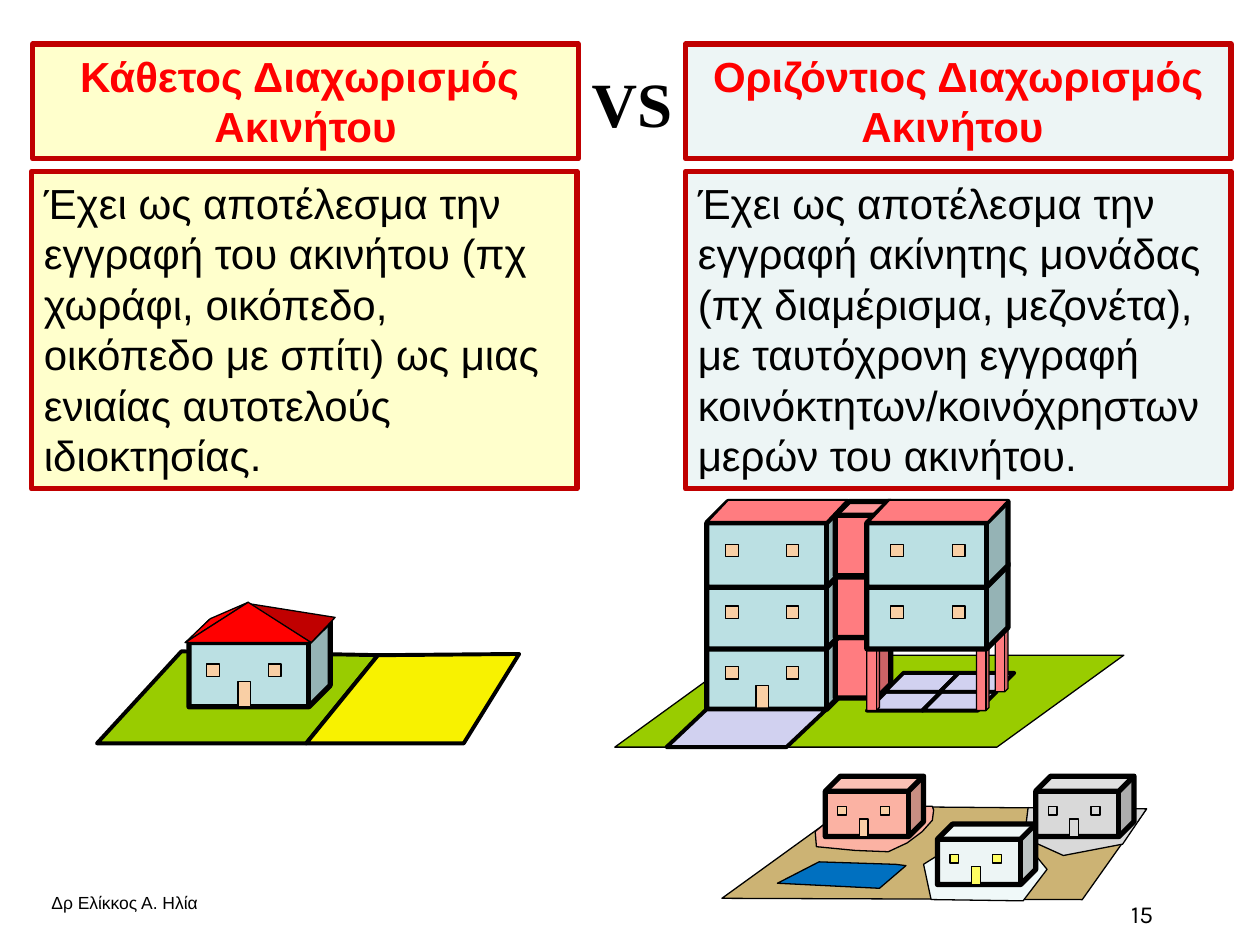
from pptx import Presentation
from pptx.dml.color import RGBColor
from pptx.enum.shapes import MSO_SHAPE
from pptx.enum.text import MSO_ANCHOR, PP_ALIGN
from pptx.util import Emu, Pt

PX = 9144  # EMU per px, 100 px to the inch
RECT, CUBE = MSO_SHAPE.RECTANGLE, MSO_SHAPE.CUBE
SLANT, TRIANGLE = MSO_SHAPE.PARALLELOGRAM, MSO_SHAPE.ISOSCELES_TRIANGLE
TOP, BOTTOM = MSO_ANCHOR.TOP, MSO_ANCHOR.BOTTOM
LEFT, CENTER, RIGHT = PP_ALIGN.LEFT, PP_ALIGN.CENTER, PP_ALIGN.RIGHT

COLORS = {
    "black": "000000", "red": "FF0000", "dark_red": "C00000",
    "cream": "FFFFCC", "mist": "EDF5F5", "snow": "F0F9F9",
    "grass": "99CC00", "field": "F8F200", "sand": "CCB374",
    "wall": "BBE0E3", "brick": "FF7C80", "paving": "D1D1F0",
    "peach": "F9CFA5", "salmon": "FBB2A3", "grey": "D9D9D9",
    "lemon": "FFFE62", "pool": "0070C0",
}
BODY = {"size": Pt(24), "name": "Arial", "bold": False}
HEADING = {**BODY, "bold": True}
VERSUS = {"size": Pt(36), "name": "Times New Roman", "bold": True}
FOOTER = {"size": Pt(10), "name": "Arial"}
PAGE_NUMBER = {"size": Pt(14), "name": "Karla"}


def px(*values):
    return [Emu(v * PX) for v in values]


def color(name):
    return RGBColor.from_string(COLORS[name])


def paint(sp, fill, line="black", width=0.75):
    sp.shadow.inherit = False
    sp.fill.solid()
    sp.fill.fore_color.rgb = color(fill)
    sp.line.color.rgb = color(line)
    sp.line.width = Pt(width)


def shape(s, kind, box, fill, line="black", width=0.75, adj=None):
    sp = s.shapes.add_shape(kind, *px(*box))
    paint(sp, fill, line, width)
    if adj is not None:
        sp.adjustments[0] = adj
    return sp


def outline(s, points, fill, width=0.75):
    builder = s.shapes.build_freeform(*points[0], scale=PX)
    builder.add_line_segments(points[1:], close=True)
    paint(builder.convert_to_shape(), fill, width=width)


def write(sp, lines, style, ink="black", align=LEFT, anchor=TOP, wrap=True):
    tf = sp.text_frame
    tf.word_wrap = wrap
    tf.vertical_anchor = anchor
    for i, line in enumerate(lines):
        p = tf.add_paragraph() if i else tf.paragraphs[0]
        p.alignment = align
        r = p.add_run()
        r.text = line
        r.font.color.rgb = color(ink)
        for key, value in style.items():
            setattr(r.font, key, value)


def label(s, box, text, style, **layout):
    write(s.shapes.add_textbox(*px(*box)), [text], style, **layout)


def panel(s, box, lines, fill, style, **layout):
    write(shape(s, RECT, box, fill, "dark_red", 3), lines, style, **layout)


def block(s, x, y, fill="wall", trim="peach", size=(112, 68), pane=10,
          windows=(15, 63), sill=34, door=None):
    """A cube with square windows and, at the offset given, a door."""
    shape(s, CUBE, (x, y, *size), fill, width=3)
    if door:
        shape(s, RECT, (x + door[0], y + door[1], pane, 2 * pane), trim)
    for dx in windows:
        shape(s, RECT, (x + dx, y + sill, pane, pane), trim)


def draw_cottages(s):
    # Shared ground and the plot round each cottage
    outline(s, [(573, 713), (674, 640), (910, 642), (859, 714)], "sand")
    outline(s, [(816, 641), (813, 665), (844, 679), (891, 670), (910, 642)],
            "grey")
    outline(s, [(776, 659), (733, 686), (739, 714), (812, 715), (831, 690),
                (822, 679), (797, 672)], "snow")
    outline(s, [(647, 660), (648, 672), (679, 675), (705, 676), (720, 669),
                (732, 660), (740, 651), (741, 643), (740, 640), (674, 638)],
            "salmon")
    for x, y, fill, trim in [(655, 616, "salmon", "peach"),
                             (744, 654, "mist", "lemon"),
                             (822, 616, "grey", "grey")]:
        block(s, x, y, fill, trim, size=(78, 48), pane=7,
              windows=(10, 44), sill=24, door=(27, 34))
    # Pool
    outline(s, [(711, 686), (650, 684), (617, 701), (698, 705), (719, 687)],
            "pool")


def draw_apartments(s):
    shape(s, SLANT, (488, 520, 404, 73), "grass", adj=1.38)
    # Parking bays, two rows of two
    for x, y in [(688, 549), (702, 534)]:
        for dx in (0, 44):
            shape(s, SLANT, (x + dx, y, 59, 15), "paving", width=2.25, adj=1)
    # Floors from the ground up
    for y in (495, 447, 398):
        ground = y == 495
        block(s, 561, y, door=(39, 49) if ground else None)
        shape(s, CUBE, (663, y, 44, 59), "brick", width=3)
        if ground:
            for x, top in [(688, 510), (775, 510), (790, 495)]:
                shape(s, CUBE, (x, top, 10, 54), "brick")
        else:
            block(s, 688, y, windows=(19, 68))
    # Roofs and driveway
    for x in (562, 690):
        outline(s, [(x, 414), (x + 94, 414), (x + 110, 397), (x + 16, 397)],
                "brick")
    shape(s, SLANT, (529, 563, 127, 30), "paving", width=2.25, adj=1.06)


def draw_house(s):
    outline(s, [(77, 590), (144, 517), (300, 520), (243, 590)], "grass", 2.25)
    block(s, 150, 493, windows=(14, 63), door=(39, 48))
    # Roof
    outline(s, [(266, 490), (247, 510), (197, 479)], "dark_red")
    outline(s, [(147, 510), (167, 491), (197, 478)], "red")
    shape(s, TRIANGLE, (147, 478, 100, 32), "red", adj=0.5)
    # Neighbouring field
    outline(s, [(243, 590), (300, 520), (412, 519), (368, 590)], "field", 2.25)


def main():
    prs = Presentation()
    prs.slide_width, prs.slide_height = px(1000, 750)
    s = prs.slides.add_slide(prs.slide_layouts[6])

    # Headings
    heading = {"style": HEADING, "ink": "red", "align": CENTER}
    panel(s, (26, 35, 433, 91), ["Κάθετος Διαχωρισμός ", "Ακινήτου"],
          "cream", **heading)
    panel(s, (544, 35, 433, 91), ["Οριζόντιος Διαχωρισμός", "Ακινήτου "],
          "mist", **heading)
    label(s, (459, 46, 85, 71), "VS", VERSUS, align=CENTER, wrap=False)

    # Explanations
    panel(s, (25, 136, 433, 252),
          ["Έχει ως αποτέλεσμα την εγγραφή του ακινήτου (πχ χωράφι, οικόπεδο, "
           "οικόπεδο με σπίτι) ως μιας ενιαίας αυτοτελούς ιδιοκτησίας."],
          "cream", BODY)
    panel(s, (544, 136, 433, 252),
          ["Έχει ως αποτέλεσμα την εγγραφή ακίνητης μονάδας (πχ διαμέρισμα, "
           "μεζονέτα), με ταυτόχρονη εγγραφή κοινόκτητων/κοινόχρηστων μερών "
           "του ακινήτου."],
          "mist", BODY)

    # Drawings
    draw_cottages(s)
    draw_apartments(s)
    draw_house(s)

    # Footer
    label(s, (31, 703, 143, 27), "Δρ Ελίκκος Α. Ηλία", FOOTER)
    label(s, (717, 692, 208, 50), "15", PAGE_NUMBER, align=RIGHT,
          anchor=BOTTOM)

    prs.save("out.pptx")


if __name__ == "__main__":
    main()
